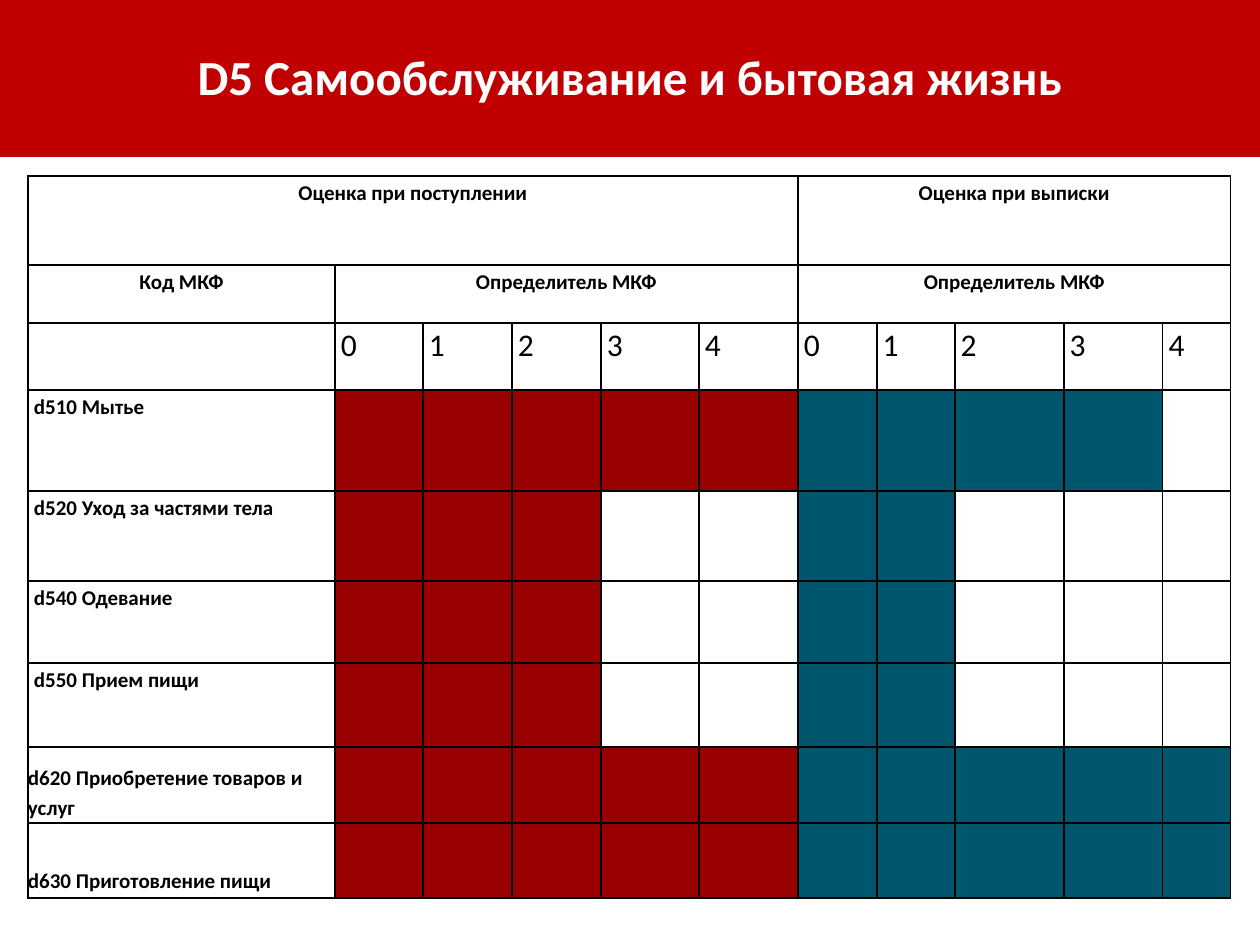
import pptx
import pptx.dml.color
import pptx.enum.text
import pptx.oxml
import pptx.oxml.ns
import pptx.util

ALIGN = pptx.enum.text.PP_ALIGN
ANCHOR = pptx.enum.text.MSO_ANCHOR

COLS = [307, 88, 89, 89, 98, 99, 79, 78, 109, 99, 68]
ROWS = [89, 58, 67, 101, 90, 82, 84, 76, 75]
ADMISSION, DISCHARGE = 1, 6  # first column of each score group
# row, first column, column span, text
HEADERS = [
    (0, 0, 6, "Оценка при поступлении"),
    (0, DISCHARGE, 5, "Оценка при выписки"),
    (1, 0, 1, "Код МКФ"),
    (1, ADMISSION, 5, "Определитель МКФ"),
    (1, DISCHARGE, 5, "Определитель МКФ"),
]
# label, filled cells at admission and at discharge, label format
SKILLS = [
    ("d510 Мытье", 5, 4, {}),
    ("d520 Уход за частями тела", 3, 2, {}),
    ("d540 Одевание", 3, 2, {}),
    ("d550 Прием пищи", 3, 2, {}),
    ("d620 Приобретение товаров и услуг", 5, 5,
     {"left": 0, "top": 15, "spacing": 1.15}),
    ("d630 Приготовление пищи", 5, 5,
     {"left": 0, "top": 0, "bottom": 4, "anchor": ANCHOR.BOTTOM}),
]


def px(n):
    return pptx.util.Emu(round(n * 914400 / 126))


def rgb(value):
    return pptx.dml.color.RGBColor.from_string(value)


class Deck:
    FONT = "Calibri"
    INK = "000000"
    WHITE = "FFFFFF"
    BANNER = "C00000"
    RED = "990000"
    TEAL = "00566D"

    def __init__(self, width, height):
        self.prs = pptx.Presentation()
        self.prs.slide_width, self.prs.slide_height = px(width), px(height)
        self.slide = self.prs.slides.add_slide(self.prs.slide_layouts[5])

    def format(self, p, size, color, bold, align):
        p.alignment = align
        for r in p.runs:
            r.font.name = self.FONT
            r.font.size = pptx.util.Pt(size)
            r.font.bold = bold
            r.font.color.rgb = rgb(color)

    def table(self, left, top, cols, rows):
        """Add a plain table with thin borders and unfilled cells."""
        table = self.slide.shapes.add_table(
            len(rows), len(cols), px(left), px(top),
            px(sum(cols)), px(sum(rows))).table
        table.first_row = table.horz_banding = False
        for col, width in zip(table.columns, cols):
            col.width = px(width)
        for row, height in zip(table.rows, rows):
            row.height = px(height)
        for cell in table.iter_cells():
            self.border(cell)
            cell.fill.background()
        return table

    def border(self, cell):
        tc_pr = cell._tc.get_or_add_tcPr()
        for side in "LRTB":
            tc_pr.append(pptx.oxml.parse_xml(
                f'<a:ln{side} {pptx.oxml.ns.nsdecls("a")} w="12700">'
                f'<a:solidFill><a:srgbClr val="{self.INK}"/></a:solidFill>'
                f'</a:ln{side}>'))

    def cell(self, cell, text, size=12, bold=True, align=ALIGN.LEFT, left=6,
             top=5, bottom=0, anchor=ANCHOR.TOP, spacing=None):
        cell.margin_left, cell.margin_right = px(left), 0
        cell.margin_top, cell.margin_bottom = px(top), px(bottom)
        cell.vertical_anchor = anchor
        p = cell.text_frame.paragraphs[0]
        p.text = text
        p.line_spacing = spacing
        self.format(p, size, self.INK, bold, align)

    def bar(self, table, row, start, count, color):
        """Fill the first count cells of a score group."""
        for col in range(start, start + count):
            fill = table.cell(row, col).fill
            fill.solid()
            fill.fore_color.rgb = rgb(color)

    def banner(self, width, height):
        builder = self.slide.shapes.build_freeform(px(width), 0)
        builder.add_line_segments(
            [(0, 0), (0, px(height)), (px(width), px(height))], close=True)
        sp = builder.convert_to_shape()
        sp.shadow.inherit = False
        sp.fill.solid()
        sp.fill.fore_color.rgb = rgb(self.BANNER)
        sp.line.fill.background()
        return sp

    def title(self, text, left, top, width, height, above):
        """Place the title in front of the shape named above."""
        sp = self.slide.shapes.title
        above.element.addnext(sp.element)
        sp.left, sp.top = px(left), px(top)
        sp.width, sp.height = px(width), px(height)
        tf = sp.text_frame
        tf.text = text
        tf.word_wrap = True
        tf.auto_size = pptx.enum.text.MSO_AUTO_SIZE.SHAPE_TO_FIT_TEXT
        tf.vertical_anchor = ANCHOR.TOP
        tf.margin_left = tf.margin_right = tf.margin_bottom = 0
        tf.margin_top = px(3)
        p = tf.paragraphs[0]
        p.space_before = pptx.util.Pt(1.1)
        self.format(p, 28, self.WHITE, True, ALIGN.CENTER)


def main():
    deck = Deck(1260, 945)
    table = deck.table(28, 176, COLS, ROWS)

    for row, col, span, text in HEADERS:
        cell = table.cell(row, col)
        if span > 1:
            cell.merge(table.cell(row, col + span - 1))
        deck.cell(cell, text, align=ALIGN.CENTER, left=0)

    for start in (ADMISSION, DISCHARGE):
        for score in range(5):
            deck.cell(table.cell(2, start + score), str(score),
                      size=18, bold=False, top=4)

    for row, (label, admission, discharge, style) in enumerate(SKILLS, 3):
        deck.cell(table.cell(row, 0), label, **style)
        deck.bar(table, row, ADMISSION, admission, deck.RED)
        deck.bar(table, row, DISCHARGE, discharge, deck.TEAL)

    banner = deck.banner(1260, 157)
    deck.title("D5 Самообслуживание и бытовая жизнь", 195, 44, 869, 63, banner)
    deck.prs.save("out.pptx")


if __name__ == "__main__":
    main()
